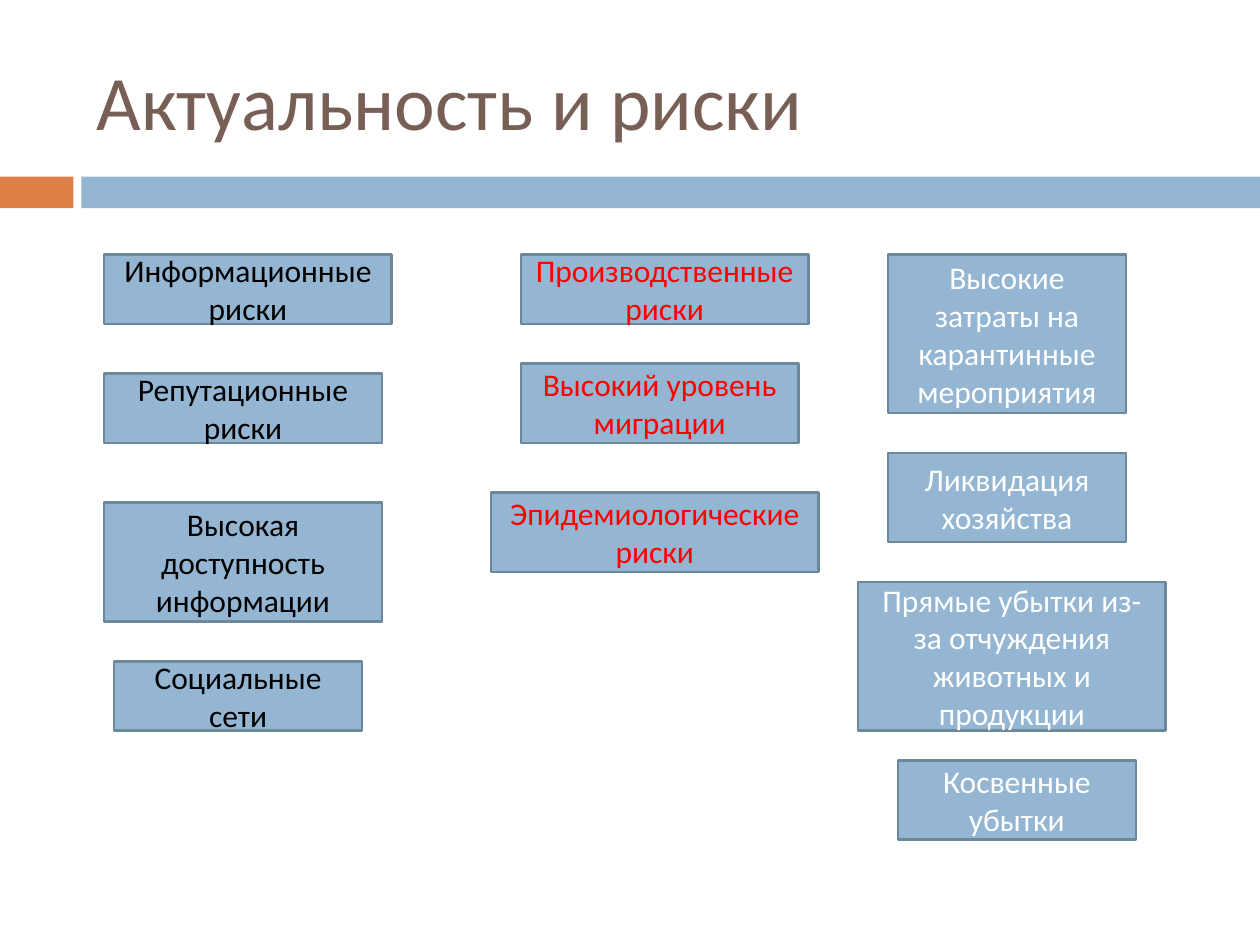
from pptx import Presentation
from pptx.dml.color import RGBColor
from pptx.enum import shapes, text
from pptx import util as u

HUES = {"sky": "94B6D2", "edge": "6D879B", "rust": "DD8047", "brown": "775F55",
        "black": "000000", "red": "FF0000", "white": "FFFFFF"}
FONT = "Calibri"
TOP = 5.13

COLUMNS = {
    "black": [
        ("Информационные риски", 2.1, 0, 5.8, 1.4),
        ("Репутационные риски", 2.1, 2.4, 5.6, 1.4),
        ("Высокая доступность информации", 2.1, 5, 5.6, 2.4),
        ("Социальные сети", 2.3, 8.2, 5, 1.4),
    ],
    "red": [
        ("Производственные риски", 10.5, 0, 5.8, 1.4),
        ("Высокий уровень миграции", 10.5, 2.2, 5.6, 1.6),
        ("Эпидемиологические риски", 9.9, 4.8, 6.6, 1.6),
    ],
    "white": [
        ("Высокие затраты на карантинные мероприятия", 17.9, 0, 4.8, 3.2),
        ("Ликвидация хозяйства", 17.9, 4, 4.8, 1.8),
        ("Прямые убытки из-за отчуждения животных и продукции", 17.3, 6.6, 6.2, 3),
        ("Косвенные убытки", 18.1, 10.2, 4.8, 1.6),
    ],
}


class Board:
    def __init__(self, deck):
        self.slide = deck.slides.add_slide(deck.slide_layouts[6])
        self.frame = {"word_wrap": True, "vertical_anchor": text.MSO_ANCHOR.MIDDLE}

    def apply(self, target, values):
        for name, value in values.items():
            setattr(target, name, value)

    def hue(self, name):
        return RGBColor.from_string(HUES[name])

    def label(self, shape, words, size, hue, align):
        frame = shape.text_frame
        self.apply(frame, self.frame)
        para = frame.paragraphs[0]
        para.alignment = align
        run = para.add_run()
        run.text = words
        self.apply(run.font, {"name": FONT, "size": u.Pt(size)})
        run.font.color.rgb = self.hue(hue)

    def bar(self, place, fill):
        shape = self.slide.shapes.add_shape(
            shapes.MSO_SHAPE.RECTANGLE, *map(u.Cm, place))
        shape.shadow.inherit = False
        shape.fill.solid()
        shape.fill.fore_color.rgb = self.hue(fill)
        shape.line.fill.background()
        return shape

    def title(self, place, words):
        box = self.slide.shapes.add_textbox(*map(u.Cm, place))
        self.label(box, words, 44, "brown", text.PP_ALIGN.LEFT)

    def card(self, place, words, hue):
        shape = self.bar(place, "sky")
        shape.line.color.rgb = self.hue("edge")
        shape.line.width = u.Pt(1.5)
        self.label(shape, words, 18, hue, text.PP_ALIGN.CENTER)


def main():
    deck = Presentation()
    deck.slide_width, deck.slide_height = u.Cm(25.4), u.Cm(19.05)
    board = Board(deck)
    board.bar((0, 3.56, 1.48, 0.64), "rust")
    board.bar((1.64, 3.56, 23.76, 0.64), "sky")
    board.title((1.7, 0.64, 22.66, 2.75), "Актуальность и риски")
    for hue, cards in COLUMNS.items():
        for words, left, drop, width, height in cards:
            board.card((left, TOP + drop, width, height), words, hue)
    deck.save("out.pptx")


if __name__ == "__main__":
    main()
